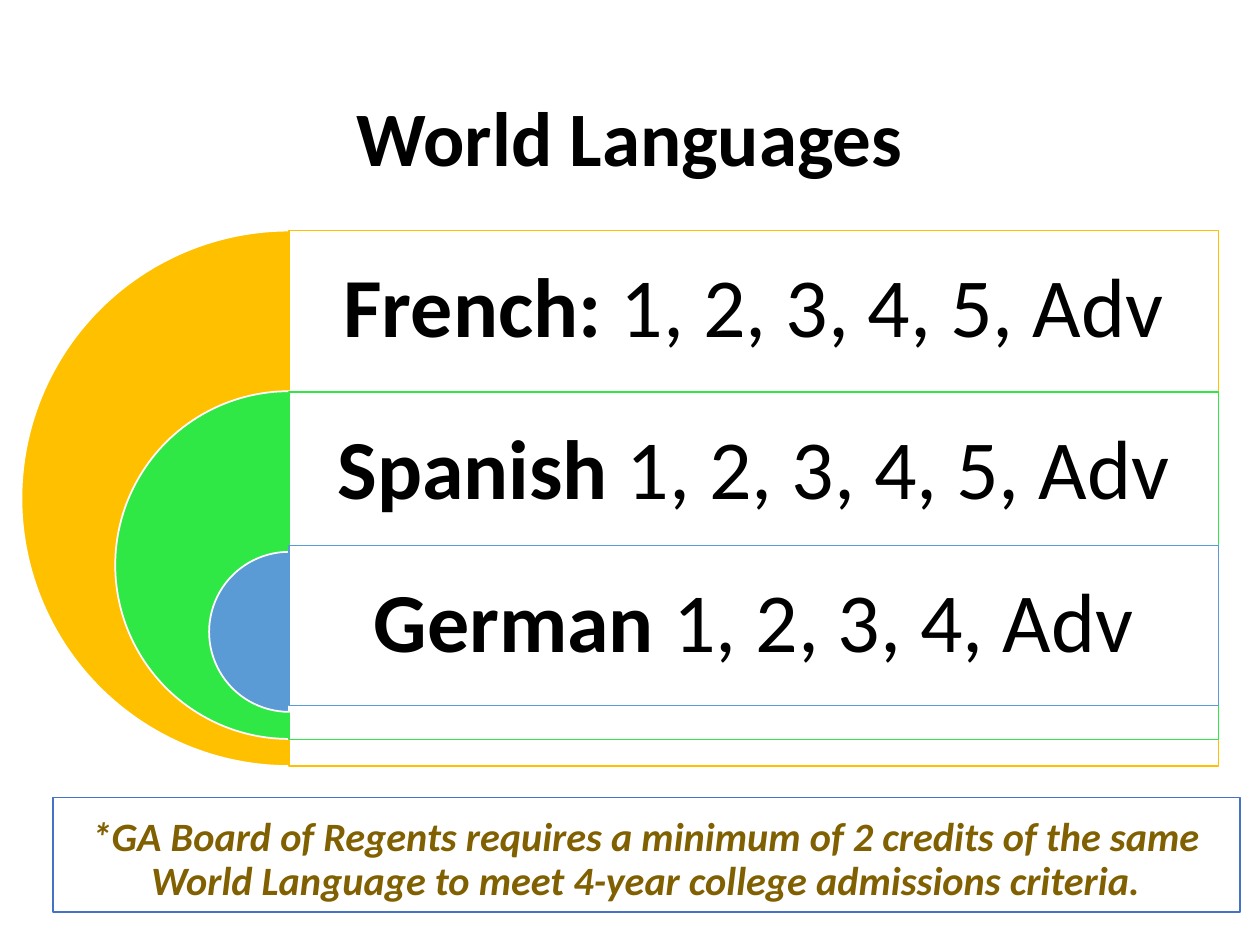
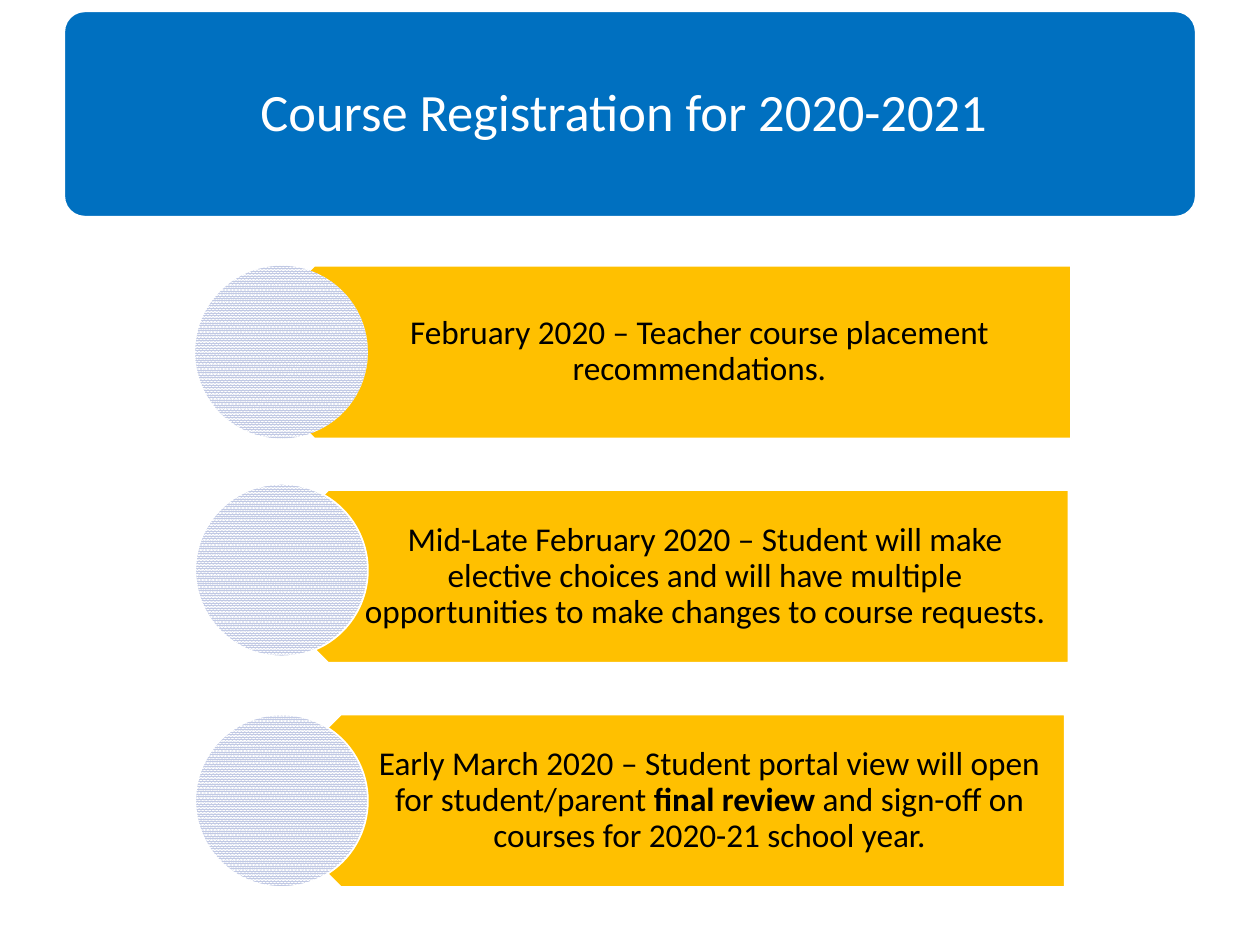
from lxml import etree
from pptx import Presentation
from pptx.dml.color import RGBColor
from pptx.enum import dml, shapes, text
from pptx.oxml import ns
from pptx.util import Inches, Pt

FONT = "Calibri"
BLACK = RGBColor(0x00, 0x00, 0x00)
WHITE = RGBColor(0xFF, 0xFF, 0xFF)
GOLD = RGBColor(0xFF, 0xC0, 0x00)
GREEN = RGBColor(0x30, 0xE8, 0x45)
SKY = RGBColor(0x5B, 0x9B, 0xD5)
NOTE_BORDER = RGBColor(0x44, 0x72, 0xC4)
NOTE_TEXT = RGBColor(0x80, 0x60, 0x00)
BANNER = RGBColor(0x00, 0x70, 0xC0)
DOT_TINT = RGBColor(0xC1, 0xC9, 0xE4)

LANGUAGES = [
    ("French:", " 1, 2, 3, 4, 5, Adv", GOLD, 1.83),
    ("Spanish", " 1, 2, 3, 4, 5, Adv", GREEN, 3.11),
    ("German", " 1, 2, 3, 4, Adv", SKY, 4.33),
]
MILESTONES = [
    ([("February 2020 – Teacher course placement recommendations.", False)],
     (1.81, 2.11, 6.69, 1.37), 2.11, None),
    ([("Mid-Late February 2020 – Student will make elective choices and will have "
       "multiple opportunities to make changes to course requests.", False)],
     (1.92, 3.89, 6.56, 1.37), 3.84, WHITE),
    ([("Early March 2020 – Student portal view will open for student/parent ", False),
      ("final review ", True),
      ("and sign-off on courses for 2020-21 school year.", False)],
     (2.02, 5.67, 6.43, 1.37), 5.67, WHITE),
]


def write_text(shape, runs, size, color=BLACK, italic=False, insets=(0.1, 0.05, 0.1, 0.05)):
    frame = shape.text_frame
    frame.word_wrap = True
    frame.auto_size = text.MSO_AUTO_SIZE.NONE
    frame.vertical_anchor = text.MSO_ANCHOR.MIDDLE
    (frame.margin_left, frame.margin_top,
     frame.margin_right, frame.margin_bottom) = map(Inches, insets)
    paragraph = frame.paragraphs[0]
    paragraph.alignment = text.PP_ALIGN.CENTER
    paragraph.line_spacing = 0.9
    for words, bold in runs:
        run = paragraph.add_run()
        run.text = words
        font = run.font
        font.name, font.size, font.bold, font.italic = FONT, Pt(size), bold, italic
        font.color.rgb = color


def add_text(slide, box, runs, size, **style):
    write_text(slide.shapes.add_textbox(*map(Inches, box)), runs, size, **style)


def add_block(slide, kind, box, fill, line=WHITE, opacity=None):
    shape = slide.shapes.add_shape(kind, *map(Inches, box))
    shape.shadow.inherit = False
    shape.fill.solid()
    shape.fill.fore_color.rgb = fill
    if opacity is not None:
        color = shape.element.spPr.find(ns.qn("a:solidFill"))[0]
        etree.SubElement(color, ns.qn("a:alpha")).set("val", str(opacity * 1000))
    if line is None:
        shape.line.fill.background()
    else:
        shape.line.color.rgb = line
        shape.line.width = Pt(1)
    return shape


def place_title(slide, box, runs, size, **style):
    title = slide.shapes.title
    title.left, title.top, title.width, title.height = map(Inches, box)
    write_text(title, runs, size, **style)
    return title


def add_nested_languages(slide, box):
    left, top, width, height = box
    center = left + height / 2
    panel_width = width - height / 2
    row_height = 1.27
    for index, (name, levels, color, panel_top) in enumerate(LANGUAGES):
        diameter = height - 1.49 * index
        pie_box = (center - diameter / 2, top + 1.275 * index, diameter, diameter)
        pie = add_block(slide, shapes.MSO_SHAPE.PIE, pie_box, color)
        pie.adjustments[0], pie.adjustments[1] = 54, 162
        add_block(slide, shapes.MSO_SHAPE.RECTANGLE,
                  (center, panel_top, panel_width, diameter), WHITE, color, opacity=90)
        add_text(slide, (center, panel_top, panel_width, row_height),
                 [(name, True), (levels, False)], 48, insets=(0.2,) * 4)


def add_requirement_note(slide, box):
    left, top, width, height = box
    add_block(slide, shapes.MSO_SHAPE.RECTANGLE, box, WHITE, NOTE_BORDER, opacity=90)
    add_text(slide, (left, top + 0.09, width, height - 0.09),
             [("*GA Board of Regents requires a minimum of 2 credits of the same World "
               "Language to meet 4-year college admissions criteria.", True)],
             23, color=NOTE_TEXT, italic=True, insets=(0.1,) * 4)


def add_banner_title(slide, box, words):
    left, top, width, height = box
    banner = add_block(slide, shapes.MSO_SHAPE.ROUNDED_RECTANGLE, box, BANNER)
    banner.adjustments[0] = 0.1
    title = place_title(slide, (left + 0.05, top + 0.05, width - 0.1, height - 0.1),
                        [(words, False)], 30, color=WHITE, insets=(0.12,) * 4)
    title.element.addprevious(banner.element)


def add_milestone(slide, box, runs, dot_top, dot_line):
    left, top, width, height = box
    arrow = add_block(slide, shapes.MSO_SHAPE.PENTAGON, box, GOLD)
    arrow.rotation = 180
    point = height / 4
    add_text(slide, (left + point, top, width - point, height), runs, 19,
             insets=(0.6, 0.08, 0.15, 0.08))
    dot = add_block(slide, shapes.MSO_SHAPE.OVAL, (1.55, dot_top, height, height),
                    DOT_TINT, dot_line)
    dot.fill.patterned()
    dot.fill.pattern = dml.MSO_PATTERN.PERCENT_90
    dot.fill.fore_color.rgb = DOT_TINT
    dot.fill.back_color.rgb = WHITE


def build_languages_slide(slide):
    place_title(slide, (0.69, 0.4, 8.62, 1.45), [("World Languages", True)], 44)
    add_nested_languages(slide, (0.17, 1.83, 9.5, 4.25))
    add_requirement_note(slide, (0.42, 6.33, 9.42, 0.91))


def build_registration_slide(slide):
    add_banner_title(slide, (0.51, 0.09, 8.98, 1.63), "Course Registration for 2020-2021 ")
    for runs, box, dot_top, dot_line in MILESTONES:
        add_milestone(slide, box, runs, dot_top, dot_line)


def main():
    presentation = Presentation()
    presentation.slide_width = Inches(10)
    presentation.slide_height = Inches(7.5)
    title_only = presentation.slide_layouts[5]
    for build in (build_languages_slide, build_registration_slide):
        build(presentation.slides.add_slide(title_only))
    presentation.save("out.pptx")


if __name__ == "__main__":
    main()
